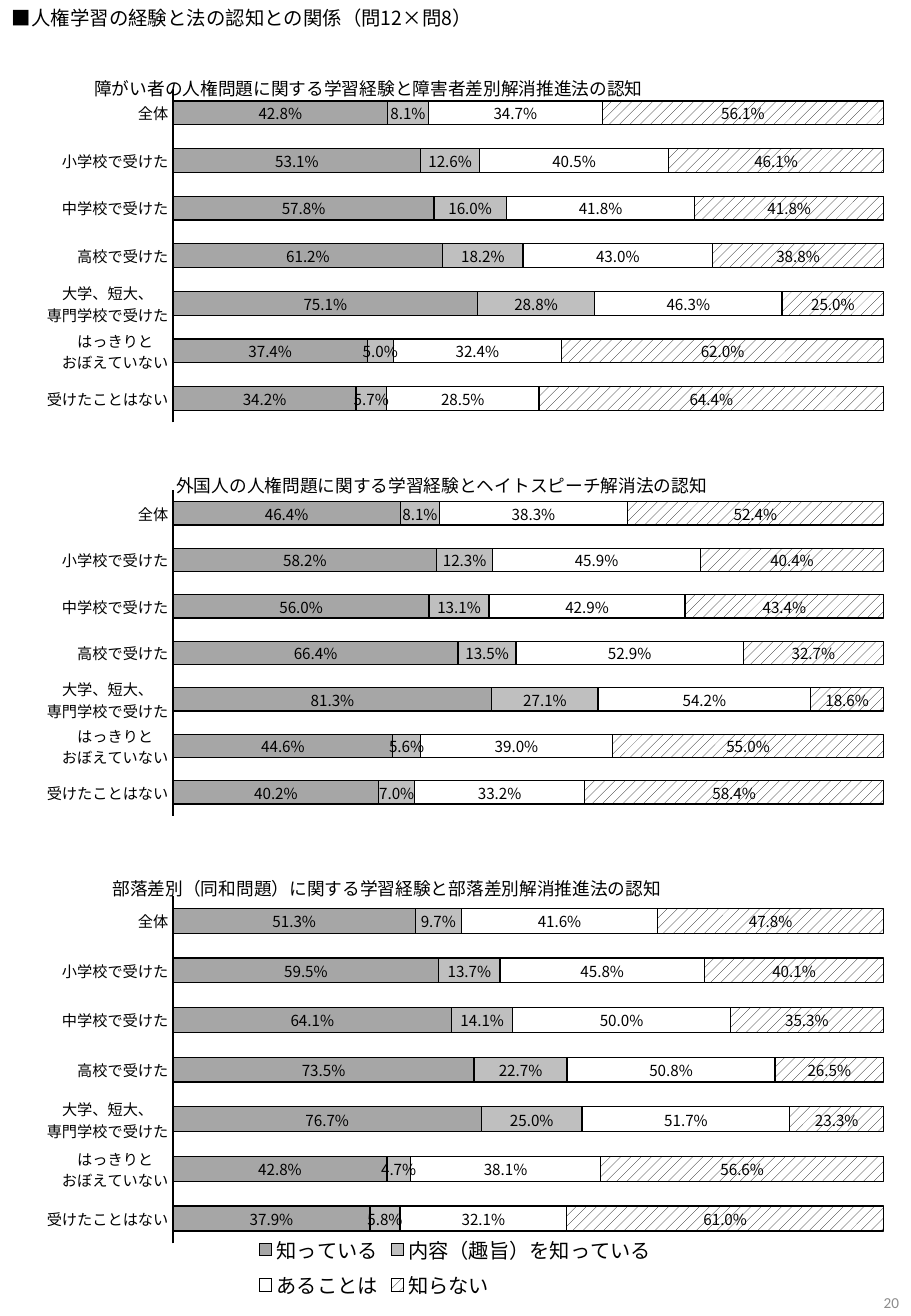
from lxml.etree import SubElement
from pptx import Presentation
from pptx.chart.data import CategoryChartData
from pptx.dml.color import RGBColor
from pptx.enum.chart import XL_CHART_TYPE, XL_LABEL_POSITION, XL_LEGEND_POSITION, XL_TICK_MARK
from pptx.enum.dml import MSO_PATTERN
from pptx.enum.text import MSO_ANCHOR, PP_ALIGN
from pptx.oxml import parse_xml
from pptx.oxml.ns import nsdecls, qn
from pptx.util import Inches, Pt

COLORS = {"ink": "000000", "paper": "FFFFFF", "known": "A6A6A6",
          "content": "BFBFBF", "page": "8C8C8C"}
JAPANESE = "Noto Sans CJK JP"
EXPERIENCES = ["全体", "小学校で受けた", "中学校で受けた", "高校で受けた",
               "大学、短大、\n専門学校で受けた", "はっきりと\nおぼえていない", "受けたことはない"]
ANSWERS = ["知っている", "内容（趣旨）を知っている", "あることは", "知らない"]
SURVEYS = [
    {"title": "障がい者の人権問題に関する学習経験と障害者差別解消推進法の認知",
     "top": 0.51, "height": 3.19, "title_at": (0.1, 0.02), "plot": (0.19, 0.07, 0.78, 0.86),
     "legend": False,
     "rates": [(0.428, 0.531, 0.578, 0.612, 0.751, 0.374, 0.342),
               (0.081, 0.126, 0.16, 0.182, 0.288, 0.05, 0.057),
               (0.347, 0.405, 0.418, 0.43, 0.463, 0.324, 0.285),
               (0.561, 0.461, 0.418, 0.388, 0.25, 0.62, 0.644)]},
    {"title": "外国人の人権問題に関する学習経験とヘイトスピーチ解消法の認知",
     "top": 3.81, "height": 3.19, "title_at": (0.19, 0.01), "plot": (0.19, 0.07, 0.78, 0.84),
     "legend": False,
     "rates": [(0.464, 0.582, 0.56, 0.664, 0.813, 0.446, 0.402),
               (0.081, 0.123, 0.131, 0.135, 0.271, 0.056, 0.07),
               (0.383, 0.459, 0.429, 0.529, 0.542, 0.39, 0.332),
               (0.524, 0.404, 0.434, 0.327, 0.186, 0.55, 0.584)]},
    {"title": "部落差別（同和問題）に関する学習経験と部落差別解消推進法の認知",
     "top": 7.12, "height": 3.62, "title_at": (0.12, 0.01), "plot": (0.19, 0.07, 0.78, 0.79),
     "legend": True,
     "rates": [(0.513, 0.595, 0.641, 0.735, 0.767, 0.428, 0.379),
               (0.097, 0.137, 0.141, 0.227, 0.25, 0.047, 0.058),
               (0.416, 0.458, 0.5, 0.508, 0.517, 0.381, 0.321),
               (0.478, 0.401, 0.353, 0.265, 0.233, 0.566, 0.61)]},
]


def rgb(name):
    """Return the named colour."""
    return RGBColor.from_string(COLORS[name])


def set_font(font, size, color="ink", face=JAPANESE):
    """Set size, colour and typeface, for East Asian text as well."""
    font.size, font.name, font.bold = Pt(size), face, False
    font.color.rgb = rgb(color)
    SubElement(font._element, qn("a:ea")).set("typeface", face)


def add_text(slide, box, text, size, color="ink", face=JAPANESE, align=PP_ALIGN.LEFT):
    """Add one line of text."""
    frame = slide.shapes.add_textbox(*map(Inches, box)).text_frame
    frame.word_wrap = True
    frame.vertical_anchor = MSO_ANCHOR.MIDDLE
    line = frame.paragraphs[0]
    line.text, line.alignment = text, align
    set_font(line.font, size, color, face)


def manual_layout(position, inner=False):
    """Build a chart layout from fractions of the chart's size."""
    target = '<c:layoutTarget val="inner"/>' if inner else ""
    modes = '<c:xMode val="edge"/><c:yMode val="edge"/>'
    places = "".join(f'<c:{key} val="{value}"/>' for key, value in zip("xywh", position))
    return parse_xml(f'<c:layout {nsdecls("c")}><c:manualLayout>{target}{modes}{places}'
                     "</c:manualLayout></c:layout>")


def drop_layout(parent):
    """Remove an automatic layout."""
    for layout in parent.findall(qn("c:layout")):
        parent.remove(layout)


def style_answer(answer, color):
    """Fill, outline and label the bars of one answer."""
    fill = answer.format.fill
    if color == "hatched":
        fill.patterned()
        fill.pattern = MSO_PATTERN.PERCENT_20
        fill.fore_color.rgb, fill.back_color.rgb = rgb("ink"), rgb("paper")
    elif color:
        fill.solid()
        fill.fore_color.rgb = rgb(color)
    else:
        fill.background()
    answer.format.line.color.rgb = rgb("ink")
    answer.format.line.width = Pt(0.75)
    labels = answer.data_labels
    labels.show_value = True
    labels.position = XL_LABEL_POSITION.CENTER
    labels.number_format, labels.number_format_is_linked = "0.0%", False
    set_font(labels.font, 9)


def add_title(chart, text, position):
    """Place the chart's title."""
    chart.has_title = True
    heading = chart.chart_title
    line = heading.text_frame.paragraphs[0]
    line.text = text
    set_font(line.font, 10.5)
    drop_layout(heading._element)
    heading._element.find(qn("c:tx")).addnext(manual_layout(position))


def style_axes(chart):
    """Show only the list of experiences, from the top down."""
    experiences, rates = chart.category_axis, chart.value_axis
    experiences.reverse_order = True
    experiences.major_tick_mark = experiences.minor_tick_mark = XL_TICK_MARK.NONE
    experiences.format.line.color.rgb = rgb("ink")
    experiences.format.line.width = Pt(0.75)
    set_font(experiences.tick_labels.font, 9)
    rates.has_major_gridlines = False
    rates.visible = False


def add_survey(slide, survey):
    """Add the stacked bars of one survey."""
    data = CategoryChartData(number_format="0.0%")
    data.categories = EXPERIENCES
    for answer, rates in zip(ANSWERS, survey["rates"]):
        data.add_series(answer, rates)
    chart = slide.shapes.add_chart(
        XL_CHART_TYPE.BAR_STACKED_100, Inches(0), Inches(survey["top"]),
        Inches(7.5), Inches(survey["height"]), data).chart
    set_font(chart.font, 9)
    add_title(chart, survey["title"], survey["title_at"])
    style_axes(chart)
    bars = chart.plots[0]
    bars.gap_width, bars.overlap, bars.vary_by_categories = 100, 100, False
    for answer, color in zip(bars.series, ("known", "content", None, "hatched")):
        style_answer(answer, color)
    plot_area = chart._chartSpace.chart.plotArea
    drop_layout(plot_area)
    plot_area.insert(0, manual_layout(survey["plot"], inner=True))
    chart.has_legend = survey["legend"]
    if survey["legend"]:
        chart.legend.position = XL_LEGEND_POSITION.BOTTOM
        chart.legend.include_in_layout = False
        set_font(chart.legend.font, 12)


def main():
    """Build the slide and save it."""
    deck = Presentation()
    deck.slide_width, deck.slide_height = Inches(7.5), Inches(10.83)
    slide = deck.slides.add_slide(deck.slide_layouts[6])
    add_text(slide, (5.81, 10.61, 1.69, 0.22), "20", 9, "page", "Calibri", PP_ALIGN.RIGHT)
    for survey in SURVEYS:
        add_survey(slide, survey)
    add_text(slide, (0, 0, 7.5, 0.29), "■人権学習の経験と法の認知との関係（問12×問8）", 11.5)
    deck.save("out.pptx")


if __name__ == "__main__":
    main()
